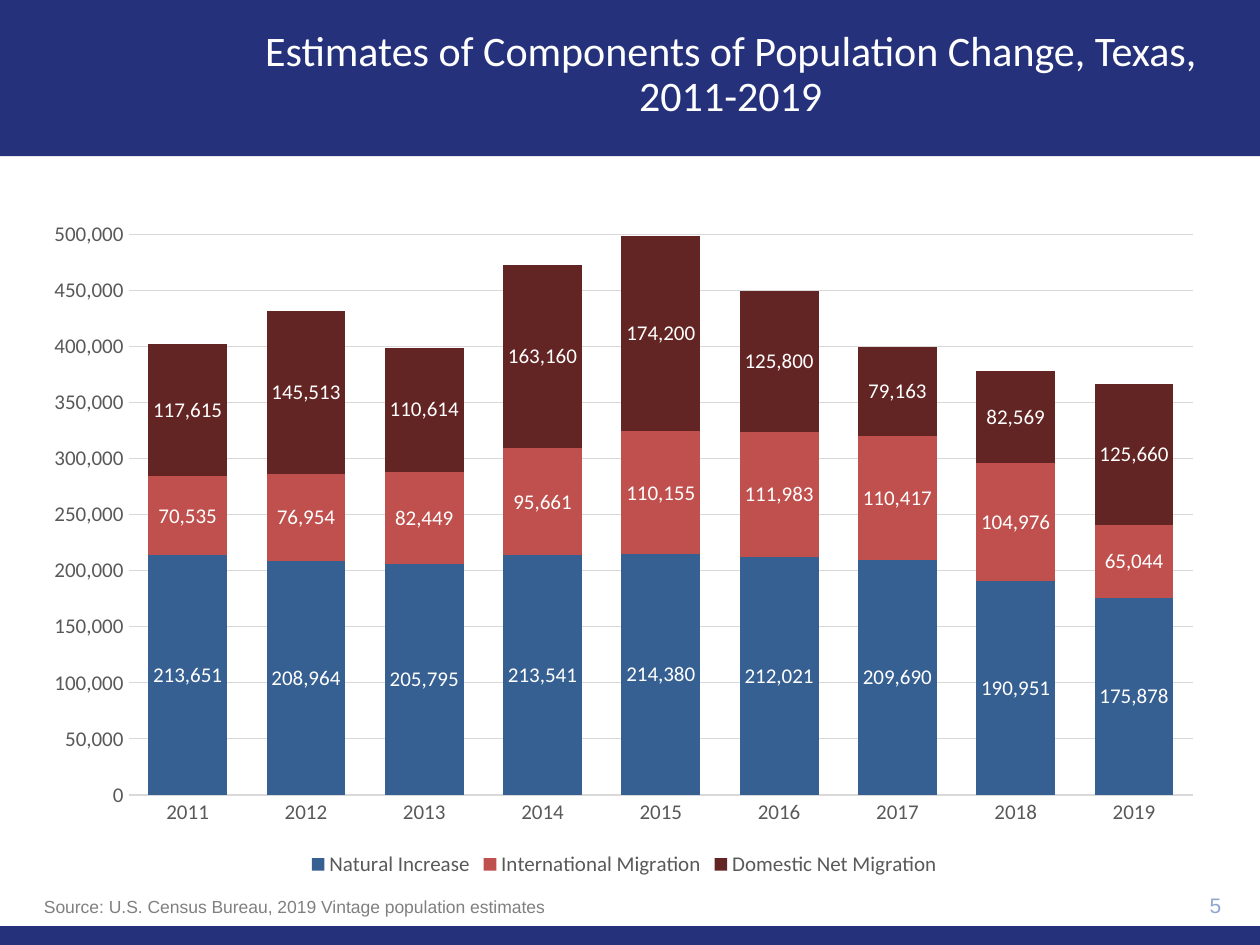
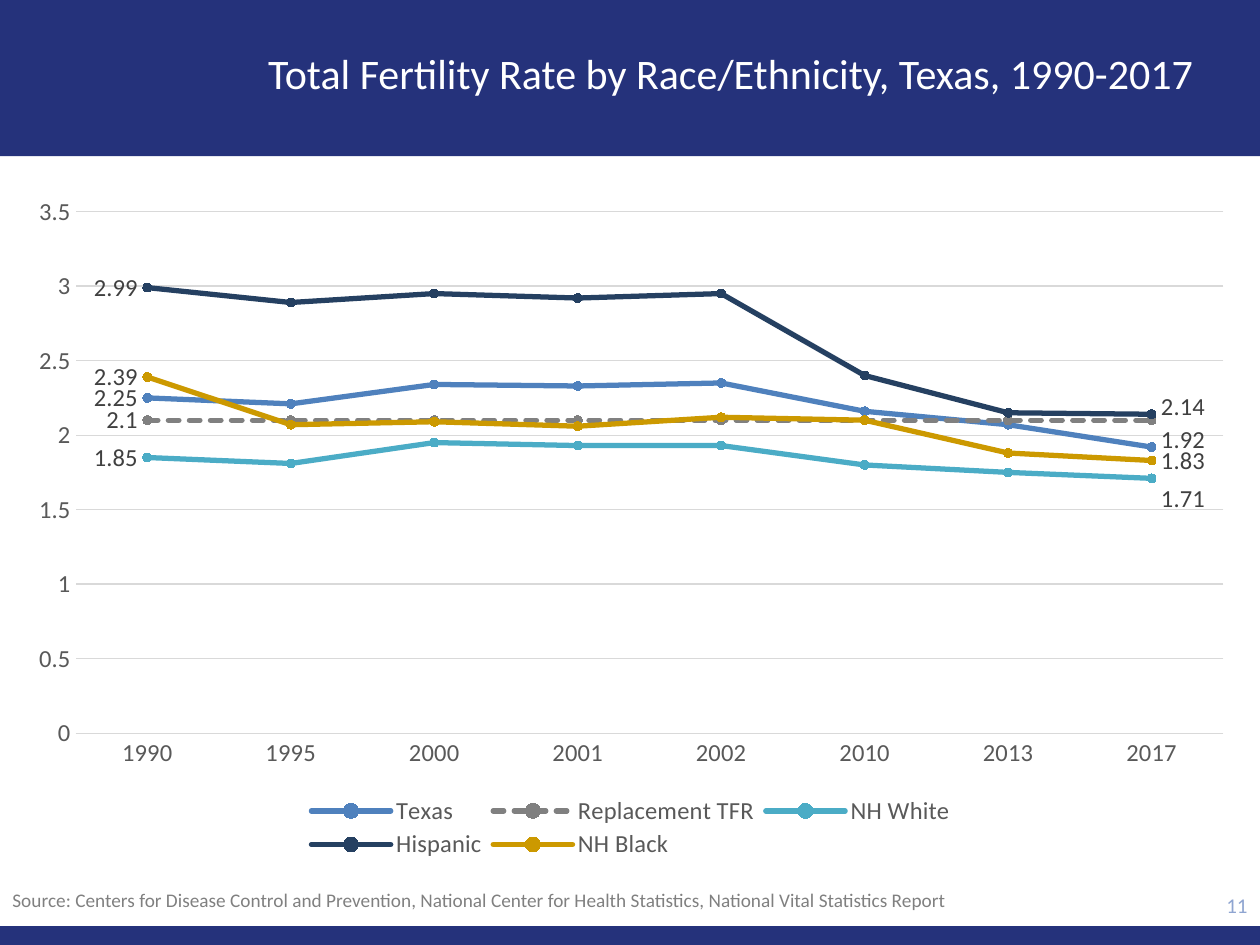
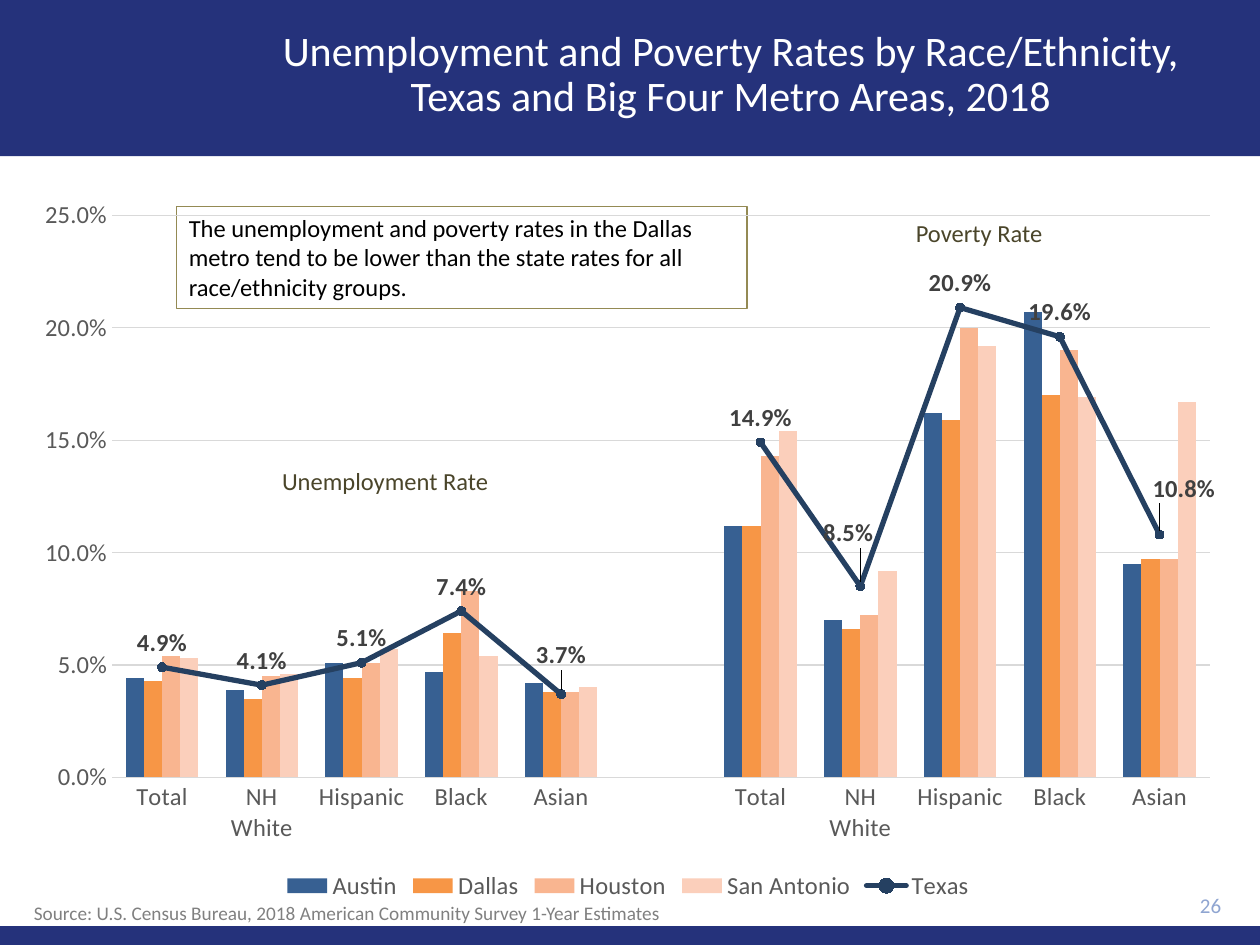
from pptx import Presentation
from pptx.chart.data import CategoryChartData
from pptx.dml.color import RGBColor
from pptx.enum import chart as ch, dml, shapes, text
from pptx.oxml import parse_xml
from pptx.oxml.ns import nsdecls
from pptx.util import Inches, Pt

HUE = dict(navy="25327B", white="FFFFFF", black="000000", page="8FA5D1",
           note="808080", axis="595959", grid="D9D9D9", tag="404040",
           olive="4A452A", edge="948A54", blue="376092", red="C0504D",
           wine="632523", sky="4F81BD", teal="4BACC6", dark="254061",
           gold="CC9900", orange="F79646", peach="F9B590", pale="FBCFBB")
BANDS = [(0, 0, 10, 1.24), (0, 7.35, 10, 0.15)]
TITLE = (1.7, 0.1, 8.2, 1)
RACES = ["Total", "NH White", "Hispanic", "Black", "Asian"]

# Series: name, colour, values. Tags: series, point, side, shift of the label.
SLIDES = [
    dict(
        title="Estimates of Components of Population Change, Texas, 2011-2019",
        page=("5", 8.9, "Arial"),
        notes=[("Source: U.S. Census Bureau, 2019 Vintage population estimates",
                (0.25, 7.06, 9.92, 0.27), dict(size=10, name="Arial", hue="note"))],
        chart=dict(
            kind="COLUMN_STACKED", at=(0.25, 1.65, 9.41, 5.35),
            plot=(1.02, 1.86, 8.45, 4.45), size=12, fmt="#,##0",
            top=500000, step=50000, gap=50, overlap=100,
            cats=[str(year) for year in range(2011, 2020)],
            labels=dict(size=12, hue="white"),
            series=[
                ("Natural Increase", "blue",
                 [213651, 208964, 205795, 213541, 214380, 212021, 209690, 190951, 175878]),
                ("International Migration", "red",
                 [70535, 76954, 82449, 95661, 110155, 111983, 110417, 104976, 65044]),
                ("Domestic Net Migration", "wine",
                 [117615, 145513, 110614, 163160, 174200, 125800, 79163, 82569, 125660])])),
    dict(
        title="Total Fertility Rate by Race/Ethnicity, Texas, 1990-2017",
        page=("11", 9.11, "Calibri"),
        notes=[("Source: Centers for Disease Control and Prevention, National Center "
                "for Health Statistics, National Vital Statistics Report",
                (0, 7, 8.75, 0.29), dict(size=11, hue="note"))],
        chart=dict(
            kind="LINE_MARKERS", at=(0.11, 1.45, 9.79, 5.43),
            plot=(0.6, 1.68, 9.11, 4.14), legend=(2.38, 6.29, 5.25, 0.56),
            size=14, fmt="General", top=3.5, step=0.5,
            cats=["1990", "1995", "2000", "2001", "2002", "2010", "2013", "2017"],
            dashed="Replacement TFR", tagfont=dict(size=14, hue="tag"),
            tags=[(row, 0, "LEFT", None) for row in range(5)] + [
                (0, 7, "RIGHT", (0, -0.01)), (2, 7, "RIGHT", (0, 0.03)),
                (3, 7, "RIGHT", (0, -0.01)), (4, 7, "RIGHT", None)],
            series=[
                ("Texas", "sky", [2.25, 2.21, 2.34, 2.33, 2.35, 2.16, 2.07, 1.92]),
                ("Replacement TFR", "note", [2.1] * 8),
                ("NH White", "teal", [1.85, 1.81, 1.95, 1.93, 1.93, 1.8, 1.75, 1.71]),
                ("Hispanic", "dark", [2.99, 2.89, 2.95, 2.92, 2.95, 2.4, 2.15, 2.14]),
                ("NH Black", "gold", [2.39, 2.07, 2.09, 2.06, 2.12, 2.1, 1.88, 1.83])])),
    dict(
        title="Unemployment and Poverty Rates by Race/Ethnicity,\n"
              "Texas and Big Four Metro Areas, 2018",
        page=("26", 8.9, "Calibri"),
        box=("The unemployment and poverty rates in the Dallas metro tend to be lower "
             "than the state rates for all race/ethnicity groups.",
             (1.4, 1.64, 4.53, 0.81)),
        notes=[("Source: U.S. Census Bureau, 2018 American Community Survey "
                "1-Year Estimates", (0.17, 7.1, 5.24, 0.29), dict(size=11, hue="note")),
               ("Poverty Rate", (7.17, 1.68, 1.22, 0.34), dict(size=14, hue="olive")),
               ("Unemployment Rate", (2.14, 3.65, 1.86, 0.34), dict(size=14, hue="olive"))],
        wrap=False,
        chart=dict(
            kind="COLUMN_CLUSTERED", at=(0.17, 1.47, 9.63, 5.72),
            plot=(0.89, 1.71, 8.71, 4.46), size=14, fmt="0.0%",
            top=0.25, step=0.05, gap=150, overlap=0, cats=RACES + [""] + RACES,
            line="Texas", tagfont=dict(size=14, hue="tag", bold=True),
            tags=[(0, 4, "ABOVE", (0, -0.02)), (0, 7, "ABOVE", (-0.01, -0.04)),
                  (0, 10, "ABOVE", (0.02, -0.03))],
            series=[
                ("Austin", "blue", [0.044, 0.039, 0.051, 0.047, 0.042, None,
                                    0.112, 0.07, 0.162, 0.207, 0.095]),
                ("Dallas", "orange", [0.043, 0.035, 0.044, 0.064, 0.038, None,
                                      0.112, 0.066, 0.159, 0.17, 0.097]),
                ("Houston", "peach", [0.054, 0.045, 0.051, 0.083, 0.038, None,
                                      0.143, 0.072, 0.2, 0.19, 0.097]),
                ("San Antonio", "pale", [0.053, 0.046, 0.057, 0.054, 0.04, None,
                                         0.154, 0.092, 0.192, 0.169, 0.167]),
                ("Texas", "dark", [0.049, 0.041, 0.051, 0.074, 0.037, None,
                                   0.149, 0.085, 0.209, 0.196, 0.108])])),
]


def rgb(hue):
    return RGBColor.from_string(HUE[hue])


def inch(at):
    return [Inches(n) for n in at]


def style(font, size, hue, name="Calibri", **more):
    font.color.rgb = rgb(hue)
    for key, val in dict(size=Pt(size), name=name, **more).items():
        setattr(font, key, val)


def fill(part, hue):
    part.fill.solid()
    part.fill.fore_color.rgb = rgb(hue)


def stroke(line, hue, width=0.75):
    line.color.rgb = rgb(hue)
    line.width = Pt(width)


def write(shape, words, look, align="LEFT", anchor="TOP", wrap=True, space=None):
    frame = shape.text_frame
    frame.text = words
    frame.word_wrap = wrap
    frame.vertical_anchor = text.MSO_ANCHOR[anchor]
    for para in frame.paragraphs:
        para.alignment = text.PP_ALIGN[align]
        para.line_spacing = space
        for run in para.runs:
            style(run.font, **look)


def rect(slide, at, hue):
    shape = slide.shapes.add_shape(shapes.MSO_SHAPE.RECTANGLE, *inch(at))
    shape.shadow.inherit = False
    fill(shape, hue)
    shape.line.fill.background()
    return shape


def set_bands(slide):
    """Put the bands on the slide's layout, behind its placeholders."""
    tree = slide.slide_layout.shapes.element
    for num, at in enumerate(BANDS):
        band = rect(slide, at, "navy").element
        band.nvSpPr.cNvPr.id = 50 + num
        tree.insert(2 + num, band)


def lay(node, spot, **parts):
    """Give a chart part a manual layout as child number spot."""
    for old in node.xpath("c:layout"):
        node.remove(old)
    body = "".join(f'<c:{key} val="{val}"/>' for key, val in parts.items())
    node.insert(spot, parse_xml(f'<c:layout {nsdecls("c")}><c:manualLayout>{body}'
                                '</c:manualLayout></c:layout>'))


def share(at, frame):
    """Turn a slide rectangle into fractions of the chart frame."""
    left, top, wide, high = frame
    return dict(xMode="edge", yMode="edge", x=(at[0] - left) / wide,
                y=(at[1] - top) / high, w=at[2] / wide, h=at[3] / high)


def add_line(chart):
    """Move the last column series to a line plot on the same axes."""
    bars = chart.element.xpath("//c:barChart")[0]
    ser = bars.xpath("c:ser")[-1]
    for old in ser.xpath("c:invertIfNegative"):
        ser.remove(old)
    line = parse_xml(f'<c:lineChart {nsdecls("c")}><c:grouping val="standard"/>'
                     '<c:varyColors val="0"/><c:marker val="1"/></c:lineChart>')
    line.insert(2, ser)
    for axis in bars.xpath("c:axId"):
        line.append(parse_xml(f'<c:axId {nsdecls("c")} val="{axis.get("val")}"/>'))
    bars.addnext(line)


def trace(ser, hue, dashed):
    ser.smooth = False
    stroke(ser.format.line, hue, 3)
    if dashed:
        ser.format.line.dash_style = dml.MSO_LINE.SQUARE_DOT
    ser.marker.style = ch.XL_MARKER_STYLE.CIRCLE
    ser.marker.size = 5
    fill(ser.marker.format, hue)
    stroke(ser.marker.format.line, hue)


def show(labels, look, fmt, on=True):
    style(labels.font, **look)
    labels.show_value = on
    labels.number_format = fmt
    labels.number_format_is_linked = False


def add_tags(chart, info):
    """Label single points of the line plot."""
    plot = chart.plots[len(chart.plots) - 1]
    for ser in plot.series:
        show(ser.data_labels, info["tagfont"], info["fmt"], "line" in info)
        if "line" in info:
            ser.data_labels.position = ch.XL_LABEL_POSITION.ABOVE
    nodes = chart.element.xpath("//c:lineChart/c:ser")
    for row, point, side, shift in info["tags"]:
        label = plot.series[row].points[point].data_label
        style(label.font, **info["tagfont"])
        label.position = ch.XL_LABEL_POSITION[side]
        if shift:
            node = nodes[row].xpath(f"c:dLbls/c:dLbl[c:idx/@val='{point}']")[0]
            lay(node, 1, x=shift[0], y=shift[1])


def set_axes(chart, info):
    look = dict(size=info["size"], hue="axis")
    for axis in (chart.category_axis, chart.value_axis):
        axis.major_tick_mark = axis.minor_tick_mark = ch.XL_TICK_MARK.NONE
        style(axis.tick_labels.font, **look)
    stroke(chart.category_axis.format.line, "grid")
    axis = chart.value_axis
    axis.format.line.fill.background()
    stroke(axis.major_gridlines.format.line, "grid")
    scale = dict(minimum_scale=0, maximum_scale=info["top"], major_unit=info["step"])
    for key, val in scale.items():
        setattr(axis, key, val)
    axis.tick_labels.number_format = info["fmt"]
    axis.tick_labels.number_format_is_linked = False
    chart.has_legend = True
    chart.legend.position = ch.XL_LEGEND_POSITION.BOTTOM
    chart.legend.include_in_layout = False
    style(chart.legend.font, **look)


def add_chart(slide, info):
    data = CategoryChartData(number_format=info["fmt"])
    data.categories = info["cats"]
    for name, _, vals in info["series"]:
        data.add_series(name, vals)
    chart = slide.shapes.add_chart(ch.XL_CHART_TYPE[info["kind"]],
                                   *inch(info["at"]), data).chart
    chart.has_title = False
    style(chart.font, info["size"], "black")
    chart.element.xpath("c:chart")[0].addnext(parse_xml(
        f'<c:spPr {nsdecls("c", "a")}><a:noFill/><a:ln><a:noFill/></a:ln></c:spPr>'))
    if "line" in info:
        add_line(chart)
    set_axes(chart, info)
    hues = {name: hue for name, hue, _ in info["series"]}
    for plot in chart.plots:
        plot.vary_by_categories = False
        if hasattr(plot, "gap_width"):
            plot.gap_width, plot.overlap = info["gap"], info["overlap"]
        for ser in plot.series:
            if hasattr(ser, "marker"):
                trace(ser, hues[ser.name], ser.name == info.get("dashed"))
            else:
                fill(ser.format, hues[ser.name])
            if "labels" in info:
                show(ser.data_labels, info["labels"], info["fmt"])
    if "tags" in info:
        add_tags(chart, info)
    for line in chart.element.xpath("//c:lineChart/c:ser/c:spPr/a:ln"):
        line.set("cap", "rnd")
    lay(chart.element.xpath("//c:plotArea")[0], 0, layoutTarget="inner",
        **share(info["plot"], info["at"]))
    if "legend" in info:
        lay(chart.element.xpath("//c:legend")[0], 1, **share(info["legend"], info["at"]))


def add_slide(deck, info):
    slide = deck.slides.add_slide(deck.slide_layouts[5])
    if len(deck.slides) == 1:
        set_bands(slide)
    title = slide.shapes.title
    title.left, title.top, title.width, title.height = inch(TITLE)
    write(title, info["title"], dict(size=24, hue="white"), "CENTER", "MIDDLE", space=0.9)
    num, left, face = info["page"]
    page = slide.shapes.add_textbox(*inch((left, 7.01, 0.89, 0.34)))
    write(page, num, dict(size=12, hue="page", name=face), "RIGHT", "MIDDLE")
    if "box" in info:
        words, at = info["box"]
        box = rect(slide, at, "white")
        stroke(box.line, "edge")
        write(box, words, dict(size=14, hue="black"))
    for words, at, look in info["notes"]:
        note = slide.shapes.add_textbox(*inch(at))
        write(note, words, look, wrap=info.get("wrap", True))
    add_chart(slide, info["chart"])


def main():
    deck = Presentation()
    deck.slide_width, deck.slide_height = inch((10, 7.5))
    for info in SLIDES:
        add_slide(deck, info)
    deck.save("out.pptx")


if __name__ == "__main__":
    main()
